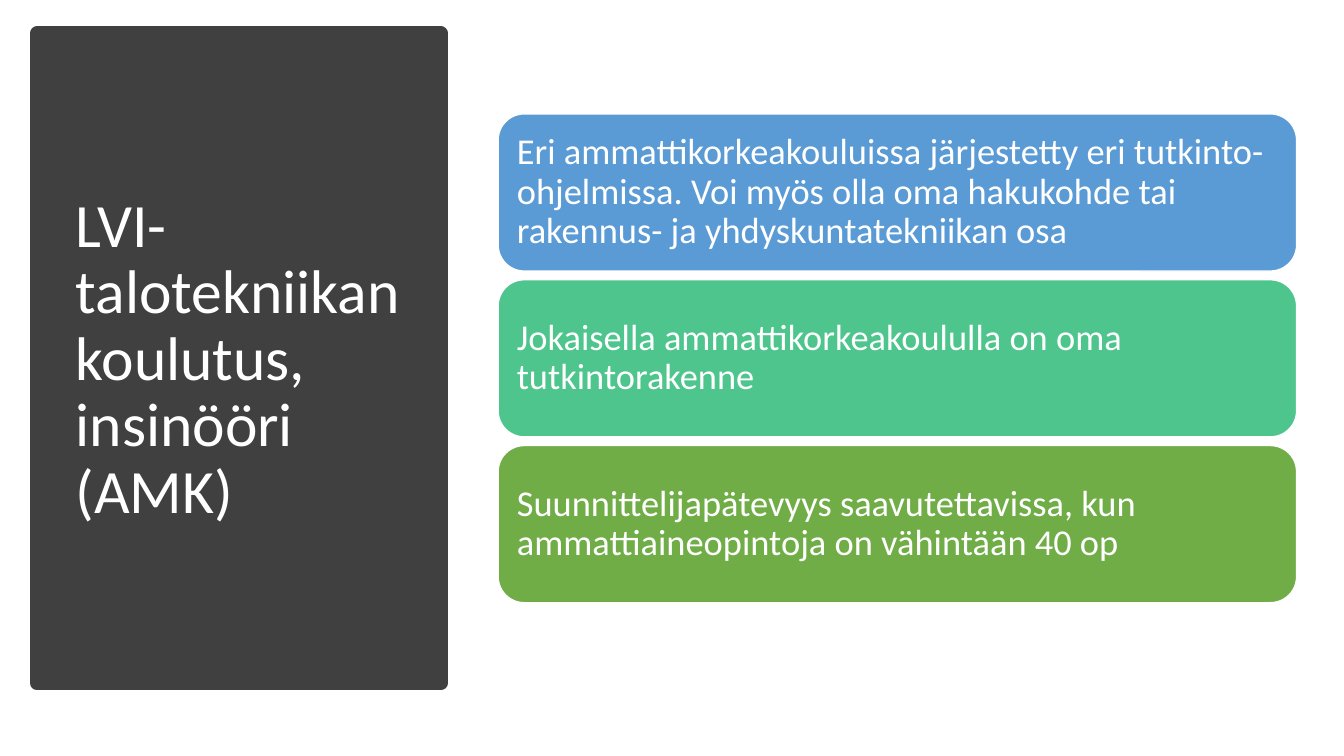
"""Build the slide on HVAC engineering education with a title panel and three cards."""
from pptx import Presentation
from pptx.dml.color import RGBColor
from pptx.enum.shapes import MSO_SHAPE as Shape
from pptx.enum.text import MSO_ANCHOR as Anchor, MSO_AUTO_SIZE as AutoSize, PP_ALIGN as Align
from pptx.util import Inches, Pt


def add_block(kind, left, top, width, height, fill, line, line_width):
    block = slide.shapes.add_shape(
        kind, Inches(left), Inches(top), Inches(width), Inches(height))
    block.shadow.inherit = False
    block.fill.solid()
    block.fill.fore_color.rgb = RGBColor.from_string(fill)
    block.line.color.rgb = RGBColor.from_string(line)
    block.line.width = Pt(line_width)
    return block


def write(frame, text, size):
    frame.text = text
    frame.word_wrap = True
    frame.auto_size = AutoSize.NONE
    frame.vertical_anchor = Anchor.MIDDLE
    paragraph = frame.paragraphs[0]
    paragraph.alignment = Align.LEFT
    paragraph.line_spacing = 0.9
    font = paragraph.runs[0].font
    font.name = "Calibri"
    font.size = Pt(size)
    font.color.rgb = RGBColor.from_string("FFFFFF")


prs = Presentation()
prs.slide_width = Inches(13.33)
prs.slide_height = Inches(7.5)
slide = prs.slides.add_slide(prs.slide_layouts[5])

title = slide.shapes.title
title.left, title.top = Inches(0.65), Inches(0.7)
title.width, title.height = Inches(3.46), Inches(5.75)
write(title.text_frame, "LVI-talotekniikan koulutus, insinööri (AMK)", 44)

panel = add_block(Shape.RECTANGLE, 0.37, 0.33, 4, 6.45, "404040", "404040", 10)
title.element.addprevious(panel.element)

cards = [
    ("Eri ammattikorkeakouluissa järjestetty eri tutkinto-ohjelmissa. "
     "Voi myös olla oma hakukohde tai rakennus- ja yhdyskuntatekniikan osa", "5B9BD5"),
    ("Jokaisella ammattikorkeakoululla on oma tutkintorakenne", "4DC58D"),
    ("Suunnittelijapätevyys saavutettavissa, kun "
     "ammattiaineopintoja on vähintään 40 op", "70AD47"),
]
card_top, card_pitch = 1.13, 1.645
for index, (statement, colour) in enumerate(cards):
    card = add_block(Shape.ROUNDED_RECTANGLE, 4.94, card_top + index * card_pitch,
                     7.92, 1.56, colour, "FFFFFF", 1)
    frame = card.text_frame
    frame.margin_left = frame.margin_right = Inches(0.11)
    frame.margin_top = frame.margin_bottom = Inches(0.11)
    write(frame, statement, 26)

prs.save("out.pptx")
